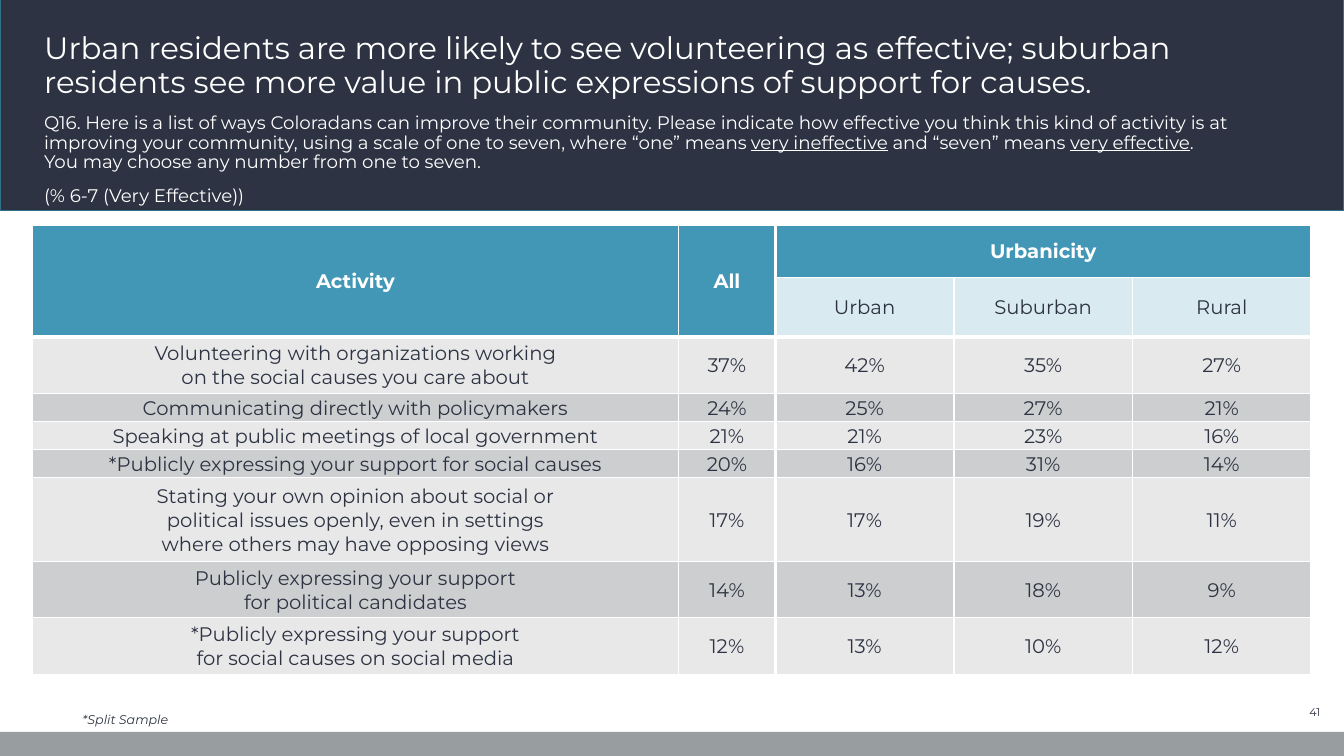
from dataclasses import dataclass
from typing import Any

from lxml.etree import SubElement
from pptx import Presentation
from pptx.dml.color import RGBColor
from pptx.enum.shapes import MSO_SHAPE
from pptx.enum.text import MSO_ANCHOR, MSO_AUTO_SIZE, PP_ALIGN
from pptx.oxml.ns import qn
from pptx.util import Cm, Pt


@dataclass(frozen=True)
class Theme:
    font: str = "Montserrat"
    navy: str = "2D3342"
    navy_edge: str = "327087"
    gray: str = "989DA0"
    white: str = "FFFFFF"
    teal: str = "4397B6"
    pale_teal: str = "D9EAF1"
    light_band: str = "E8E8E9"
    dark_band: str = "CDCECF"
    title: float = 22
    question: float = 13
    table: float = 14
    note: float = 9
    number: float = 8
    thin: float = 1
    heavy: float = 3


@dataclass(frozen=True)
class Box:
    left: float
    top: float
    width: float
    height: float

    def lengths(self) -> tuple[Cm, Cm, Cm, Cm]:
        return Cm(self.left), Cm(self.top), Cm(self.width), Cm(self.height)


@dataclass(frozen=True)
class Run:
    text: str
    underline: bool = False


@dataclass(frozen=True)
class Activity:
    lines: tuple[str, ...]
    shares: tuple[int, int, int, int]
    height: float


@dataclass(frozen=True)
class CellStyle:
    fill: str
    color: str
    bold: bool = False
    margins: tuple[float, float, float, float] = (0.03, 0.03, 0.03, 0)


THEME = Theme()
HEADER = CellStyle(THEME.teal, THEME.white, True, (0.25, 0.25, 0.25, 0.25))
HEADER_ALL = CellStyle(THEME.teal, THEME.white, True, (0, 0.25, 0, 0.25))
SUBHEADER = CellStyle(THEME.pale_teal, THEME.navy, False, (0.03, 0.05, 0.03, 0.05))
BANDS = (CellStyle(THEME.light_band, THEME.navy), CellStyle(THEME.dark_band, THEME.navy))

COLUMN_WIDTHS = (16.28, 2.44, 4.5, 4.5, 4.5)
HEADER_HEIGHTS = (1.3, 1.5)
AREAS = ("Urban", "Suburban", "Rural")
FIRST_AREA = 2
FIRST_ACTIVITY = len(HEADER_HEIGHTS)
ACTIVITIES = (
    Activity(("Volunteering with organizations working", "on the social causes you care about"),
             (37, 42, 35, 27), 1.42),
    Activity(("Communicating directly with policymakers",), (24, 25, 27, 21), 0.71),
    Activity(("Speaking at public meetings of local government",), (21, 21, 23, 16), 0.71),
    Activity(("*Publicly expressing your support for social causes",), (20, 16, 31, 14), 0.71),
    Activity(("Stating your own opinion about social or", "political issues openly, even in settings",
              "where others may have opposing views"), (17, 17, 19, 11), 2.11),
    Activity(("Publicly expressing your support", "for political candidates"), (14, 13, 18, 9), 1.42),
    Activity(("*Publicly expressing your support", "for social causes on social media"),
             (12, 13, 10, 12), 1.42),
)
TITLE = ("Urban residents are more likely to see volunteering as effective; suburban "
         "residents see more value in public expressions of support for causes.")
QUESTION = (
    (Run("Q16. Here is a list of ways Coloradans can improve their community. Please indicate how "
         "effective you think this kind of activity is at improving your community, using a scale "
         "of one to seven, where “one” means "),
     Run("very ineffective", True), Run(" and “seven” means "), Run("very effective", True),
     Run("."), Run("\n"), Run("You may choose any number from one to seven.")),
    (Run("(% 6-7 (Very Effective))"),),
)


def apply(target: Any, values: dict[str, Any]) -> None:
    for name, value in values.items():
        setattr(target, name, value)


def write(tf: Any, paragraphs: tuple[tuple[Run, ...], ...], size: float, color: str,
          align: PP_ALIGN = PP_ALIGN.LEFT, spacing: float = 1, before: float = 0,
          bold: bool = False, italic: bool = False) -> None:
    for i, runs in enumerate(paragraphs):
        p = tf.add_paragraph() if i else tf.paragraphs[0]
        apply(p, {"alignment": align, "line_spacing": spacing,
                  "space_before": Pt(before if i else 0)})
        for run in runs:
            if run.text == "\n":
                p.add_line_break()
                continue
            r = p.add_run()
            r.text = run.text
            apply(r.font, {"name": THEME.font, "size": Pt(size), "bold": bold,
                           "italic": italic, "underline": run.underline})
            r.font.color.rgb = RGBColor.from_string(color)


def place_text(sp: Any, box: Box, anchor: MSO_ANCHOR) -> Any:
    apply(sp, dict(zip(("left", "top", "width", "height"), box.lengths())))
    apply(sp.text_frame, {"word_wrap": True, "auto_size": MSO_AUTO_SIZE.NONE,
                          "vertical_anchor": anchor})
    return sp.text_frame


def add_text(s: Any, box: Box, anchor: MSO_ANCHOR) -> Any:
    return place_text(s.shapes.add_textbox(*box.lengths()), box, anchor)


def add_band(s: Any, box: Box, fill: str, line: str | None = None) -> None:
    sp = s.shapes.add_shape(MSO_SHAPE.RECTANGLE, *box.lengths())
    sp.shadow.inherit = False
    sp.fill.solid()
    sp.fill.fore_color.rgb = RGBColor.from_string(fill)
    if line:
        sp.line.color.rgb = RGBColor.from_string(line)
        sp.line.width = Pt(THEME.thin)
    else:
        sp.line.fill.background()
    s.shapes._spTree.insert(2, sp._element)


def set_borders(cell: Any, row: int, col: int) -> None:
    bottom = row + (cell.span_height if cell.is_merge_origin else 1)
    heavy = {"lnL": col == FIRST_AREA, "lnR": col == FIRST_AREA - 1,
             "lnT": row == FIRST_ACTIVITY, "lnB": bottom == FIRST_ACTIVITY}
    props = cell._tc.get_or_add_tcPr()
    for i, (edge, is_heavy) in enumerate(heavy.items()):
        width = Pt(THEME.heavy if is_heavy else THEME.thin)
        ln = SubElement(props, qn(f"a:{edge}"), w=str(width))
        SubElement(SubElement(ln, qn("a:solidFill")), qn("a:srgbClr"), val=THEME.white)
        props.insert(i, ln)


def fill_cell(table: Any, row: int, col: int, lines: tuple[str, ...], style: CellStyle) -> None:
    cell = table.cell(row, col)
    sides = ("margin_left", "margin_top", "margin_right", "margin_bottom")
    apply(cell, dict(zip(sides, map(Cm, style.margins))))
    cell.vertical_anchor = MSO_ANCHOR.MIDDLE
    cell.fill.solid()
    cell.fill.fore_color.rgb = RGBColor.from_string(style.fill)
    write(cell.text_frame, tuple((Run(line),) for line in lines), THEME.table, style.color,
          PP_ALIGN.CENTER, bold=style.bold)
    set_borders(cell, row, col)


def add_activity_table(s: Any, box: Box) -> None:
    heights = HEADER_HEIGHTS + tuple(a.height for a in ACTIVITIES)
    table = s.shapes.add_table(len(heights), len(COLUMN_WIDTHS), *box.lengths()).table
    apply(table, {"first_row": False, "horz_banding": False})
    for column, width in zip(table.columns, COLUMN_WIDTHS):
        column.width = Cm(width)
    for row, height in zip(table.rows, heights):
        row.height = Cm(height)
    for col in range(FIRST_AREA):
        table.cell(0, col).merge(table.cell(1, col))
    table.cell(0, FIRST_AREA).merge(table.cell(0, len(COLUMN_WIDTHS) - 1))
    for col, (label, style) in enumerate(
            (("Activity", HEADER), ("All", HEADER_ALL), ("Urbanicity", HEADER))):
        fill_cell(table, 0, col, (label,), style)
    for col, area in enumerate(AREAS, FIRST_AREA):
        fill_cell(table, 1, col, (area,), SUBHEADER)
    for i, activity in enumerate(ACTIVITIES):
        row, style = FIRST_ACTIVITY + i, BANDS[i % 2]
        fill_cell(table, row, 0, activity.lines, style)
        for col, share in enumerate(activity.shares, 1):
            fill_cell(table, row, col, (f"{share}%",), style)


def main() -> None:
    prs = Presentation()
    apply(prs, {"slide_width": Cm(33.87), "slide_height": Cm(19.05)})
    s = prs.slides.add_slide(prs.slide_layouts[5])
    add_band(s, Box(0, -0.08, 33.87, 5.38), THEME.navy, THEME.navy_edge)
    add_band(s, Box(0, 18.44, 33.87, 0.61), THEME.gray)
    tf = place_text(s.shapes.title, Box(0.86, 0.18, 32.11, 2.46), MSO_ANCHOR.BOTTOM)
    write(tf, ((Run(TITLE),),), THEME.title, THEME.white, spacing=0.9)
    tf = add_text(s, Box(0.86, 2.74, 32.11, 2.34), MSO_ANCHOR.TOP)
    write(tf, QUESTION, THEME.question, THEME.white, spacing=0.9, before=10)
    add_activity_table(s, Box(0.82, 5.69, 32.22, 11.3))
    tf = add_text(s, Box(1.83, 17.65, 29.69, 0.79), MSO_ANCHOR.BOTTOM)
    write(tf, ((Run("*Split Sample"),),), THEME.note, THEME.navy, spacing=0.9, italic=True)
    tf = add_text(s, Box(31.55, 17.65, 1.98, 0.61), MSO_ANCHOR.MIDDLE)
    write(tf, ((Run("41"),),), THEME.number, THEME.navy, PP_ALIGN.RIGHT)
    prs.save("out.pptx")


if __name__ == "__main__":
    main()
